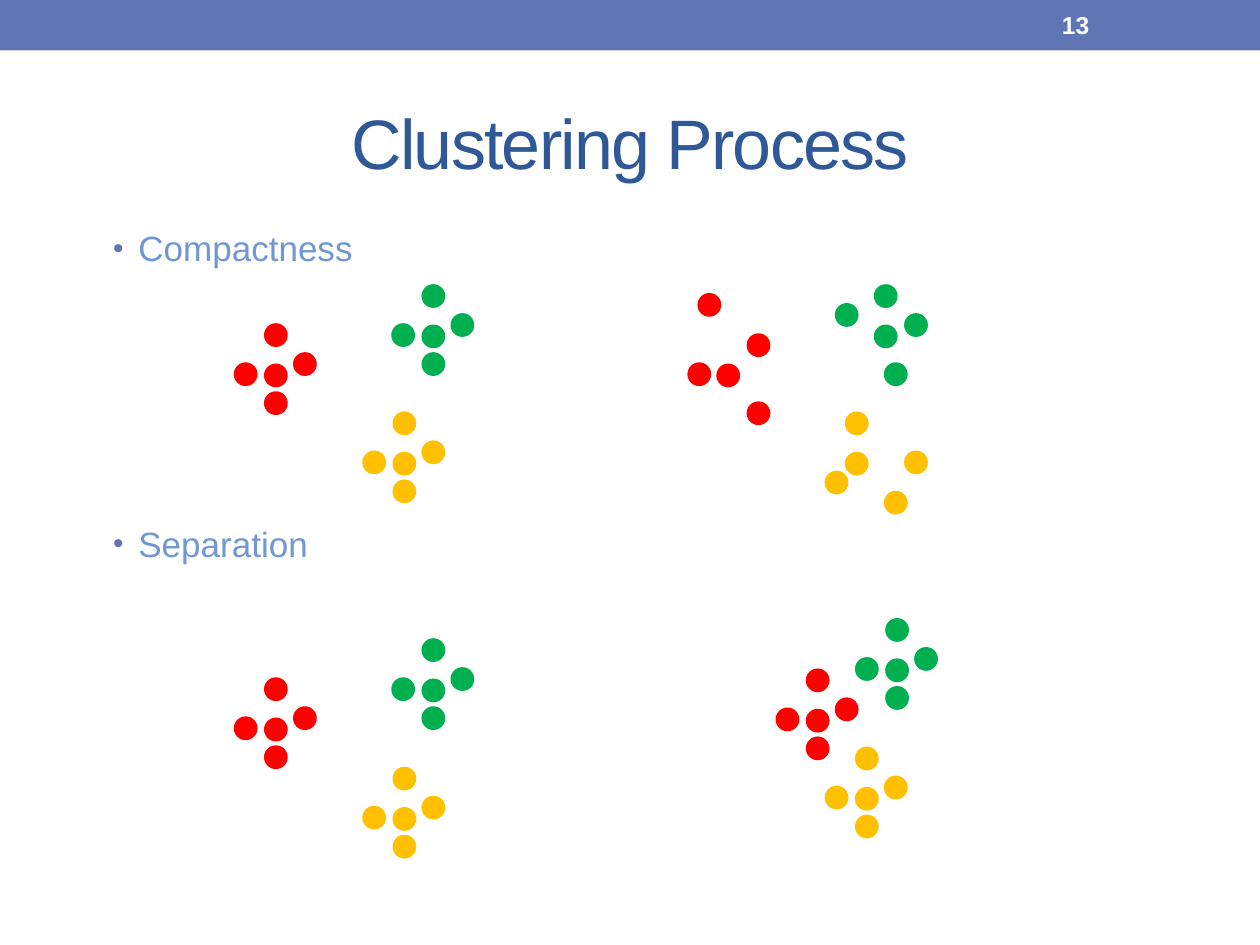
from typing import NamedTuple

from lxml.etree import SubElement
from pptx import Presentation
from pptx.dml.color import RGBColor
from pptx.enum.shapes import MSO_SHAPE as Shape
from pptx.enum.text import MSO_ANCHOR as Anchor, PP_ALIGN as Align
from pptx.oxml.ns import qn
from pptx.util import Inches, Pt

COLORS = {
    "bar": "6076B4", "title": "2F5897", "body": "7097D3", "white": "FFFFFF",
    "red": "FF0000", "green": "00B050", "yellow": "FFC000",
}
FONT = "Arial"
DOT_SIZE = 0.16
Offsets = tuple[tuple[float, float], ...]

TIGHT: Offsets = ((0, 0.31), (0.24, 0), (0.24, 0.32), (0.47, 0.23), (0.24, 0.54))
LOOSE_RED: Offsets = ((0, 0.55), (0.08, 0), (0.23, 0.56), (0.47, 0.32), (0.47, 0.86))
LOOSE_GREEN: Offsets = ((0, 0.15), (0.31, 0), (0.31, 0.32), (0.55, 0.23), (0.39, 0.62))
LOOSE_YELLOW: Offsets = ((0, 0.47), (0.16, 0), (0.16, 0.32), (0.63, 0.31), (0.47, 0.63))


class Cluster(NamedTuple):
    color: str
    left: float
    top: float
    offsets: Offsets = TIGHT


class Label(NamedTuple):
    lines: tuple[str, ...]
    left: float
    top: float
    width: float
    height: float
    color: str
    font: dict
    anchor: Anchor = Anchor.MIDDLE
    align: Align = Align.LEFT


DIAGRAMS = (
    (Cluster("red", 1.87, 2.58), Cluster("green", 3.12, 2.27),
     Cluster("yellow", 2.89, 3.28)),
    (Cluster("red", 5.47, 2.34, LOOSE_RED), Cluster("green", 6.64, 2.27, LOOSE_GREEN),
     Cluster("yellow", 6.56, 3.28, LOOSE_YELLOW)),
    (Cluster("red", 1.87, 5.39), Cluster("green", 3.12, 5.08),
     Cluster("yellow", 2.89, 6.1)),
    (Cluster("red", 6.17, 5.32), Cluster("green", 6.8, 4.92),
     Cluster("yellow", 6.56, 5.94)),
)
TITLE = Label(("Clustering Process",), 0.5, 0.58, 9, 1.08, "title",
              {"size": Pt(40)}, align=Align.CENTER)
PAGE_NUMBER = Label(("13",), 8.33, 0.02, 1.17, 0.36, "white",
                    {"size": Pt(14), "bold": True})
TOPICS = Label(("Compactness", "Separation"), 0.5, 1.75, 9, 4.66, "body",
               {"size": Pt(20)}, Anchor.TOP)
TOPIC_SPACING = (2, 145)


def rgb(name: str) -> RGBColor:
    return RGBColor.from_string(COLORS[name])


def add_label(page, label: Label):
    box = page.shapes.add_textbox(*map(Inches, label[1:5]))
    frame = box.text_frame
    frame.word_wrap = True
    frame.vertical_anchor = label.anchor
    frame.text = "\n".join(label.lines)
    for para in frame.paragraphs:
        para.alignment = label.align
        span = para.runs[0]
        for name, value in {"name": FONT, **label.font}.items():
            setattr(span.font, name, value)
        span.font.color.rgb = rgb(label.color)
    return box


def add_bullet(para) -> None:
    properties = para._p.get_or_add_pPr()
    properties.set("marL", str(Inches(0.5)))
    properties.set("indent", str(Inches(-0.2)))
    color = SubElement(properties, qn("a:buClr"))
    SubElement(color, qn("a:srgbClr"), val=COLORS["bar"])
    SubElement(properties, qn("a:buSzPct"), val="85000")
    SubElement(properties, qn("a:buFont"), typeface=FONT)
    SubElement(properties, qn("a:buChar"), char="•")


def add_filled(shapes, kind: Shape, color: str, *place: float):
    shape = shapes.add_shape(kind, *map(Inches, place))
    shape.shadow.inherit = False
    shape.fill.solid()
    shape.fill.fore_color.rgb = rgb(color)
    return shape


def add_diagram(page, clusters: tuple[Cluster, ...]) -> None:
    group = page.shapes.add_group_shape()
    for cluster in clusters:
        for across, down in cluster.offsets:
            dot = add_filled(group.shapes, Shape.OVAL, cluster.color,
                             cluster.left + across, cluster.top + down,
                             DOT_SIZE, DOT_SIZE)
            dot.line.color.rgb = rgb(cluster.color)
            dot.line.width = Pt(2.08)


def main() -> None:
    deck = Presentation()
    deck.slide_width, deck.slide_height = Inches(10), Inches(7.5)
    page = deck.slides.add_slide(deck.slide_layouts[6])

    bar = add_filled(page.shapes, Shape.RECTANGLE, "bar", 0, 0, 10, 0.4)
    bar.line.fill.background()
    title = add_label(page, TITLE)
    title.text_frame.paragraphs[0].runs[0].font._element.set("spc", "-100")
    add_label(page, PAGE_NUMBER)
    topics = add_label(page, TOPICS)
    for para, space in zip(topics.text_frame.paragraphs, TOPIC_SPACING):
        para.space_before = Pt(space)
        add_bullet(para)
    for clusters in DIAGRAMS:
        add_diagram(page, clusters)

    deck.save("out.pptx")


if __name__ == "__main__":
    main()
